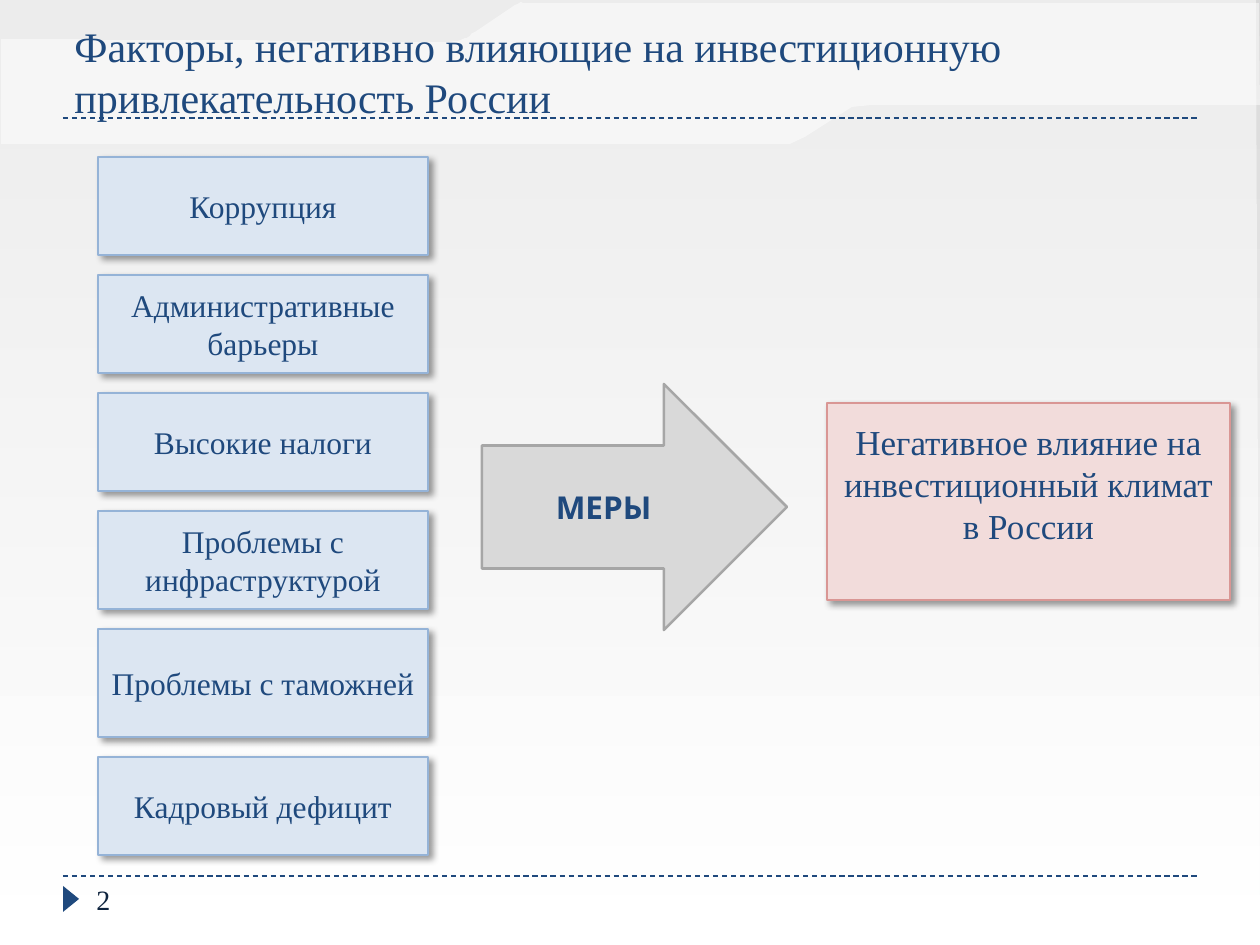
from dataclasses import dataclass

from lxml import etree
from pptx import Presentation
from pptx.dml.color import RGBColor
from pptx.enum.dml import MSO_LINE
from pptx.enum.shapes import MSO_CONNECTOR, MSO_SHAPE
from pptx.enum.text import MSO_ANCHOR, PP_ALIGN
from pptx.oxml.ns import qn
from pptx.util import Emu, Pt

RECT, ARROW = MSO_SHAPE.RECTANGLE, MSO_SHAPE.RIGHT_ARROW
TRIANGLE = MSO_SHAPE.ISOSCELES_TRIANGLE
LEFT, CENTER = PP_ALIGN.LEFT, PP_ALIGN.CENTER
TOP, MIDDLE, BOTTOM = MSO_ANCHOR.TOP, MSO_ANCHOR.MIDDLE, MSO_ANCHOR.BOTTOM

PX = 7257  # EMU per px, 126 px to the inch


@dataclass(frozen=True)
class Theme:
    navy: str = "1F497D"
    number: str = "0F243E"
    white: str = "FFFFFF"
    gray: str = "D9D9D9"
    gray_line: str = "A6A6A6"
    blue: str = "DCE6F2"
    blue_line: str = "95B3D7"
    red: str = "F2DCDB"
    red_line: str = "D99694"
    serif: str = "Times New Roman"
    sans: str = "Cabin"
    title_size: int = 24
    effect_size: int = 20
    body_size: int = 18
    number_size: int = 16


T = Theme()

TITLE = "Факторы, негативно влияющие на инвестиционную привлекательность России"
FACTORS = [  # text, height
    ("Коррупция", 98),
    ("Административные барьеры", 98),
    ("Высокие налоги", 98),
    ("Проблемы с инфраструктурой", 98),
    ("Проблемы с таможней", 108),
    ("Кадровый дефицит", 98),
]
FACTOR_LEFT, FACTOR_TOP, FACTOR_WIDTH, FACTOR_GAP = 98, 157, 330, 20
EFFECT = "Негативное влияние на инвестиционный климат в России"
MEASURES = "МЕРЫ"
PAGE = "2"

RULES_Y = (118, 876)
VEIL = [(-3, 944), (1260, 945), (1256, 0), (-4, 0)]
# Two numbers are a line's end, six are the controls and end of a curve
WAVE = [
    (1259, 3), (538, 3), (507, 3, 528, 0, 515, 5), (478, 30),
    (466, 37, 470, 39, 450, 42), (237, 40, 1, 39, 1, 39), (1, 144),
    (790, 144), (805, 137), (852, 107), (873, 105), (1260, 105),
]


def px(*values):
    return [Emu(v * PX) for v in values]


def rgb(color):
    return RGBColor.from_string(color)


def flatten(outline, steps=12):
    """Turn lines and cubic curves into a list of points."""
    points = [outline[0]]
    for part in outline[1:]:
        if len(part) == 2:
            points.append(part)
            continue
        curve = [points[-1], part[:2], part[2:4], part[4:]]
        for i in range(1, steps + 1):
            t = i / steps
            weights = ((1 - t) ** 3, 3 * t * (1 - t) ** 2, 3 * t * t * (1 - t), t ** 3)
            points.append(tuple(sum(w * c[k] for w, c in zip(weights, curve))
                                for k in (0, 1)))
    return points


def add_glaze(slide, outline):
    """Add a half-transparent white area."""
    points = flatten(outline)
    builder = slide.shapes.build_freeform(*points[0], scale=PX)
    builder.add_line_segments(points[1:], close=True)
    s = builder.convert_to_shape()
    s.shadow.inherit = False
    s.line.fill.background()
    s.fill.solid()
    s.fill.fore_color.rgb = rgb(T.white)
    color = s.fill._xPr.find(".//" + qn("a:srgbClr"))
    etree.SubElement(color, qn("a:alpha"), val="50000")


def add_rule(slide, y):
    s = slide.shapes.add_connector(MSO_CONNECTOR.STRAIGHT, *px(63, y, 1197, y))
    s.line.color.rgb = rgb(T.navy)
    s.line.width = Pt(0.75)
    s.line.dash_style = MSO_LINE.DASH
    etree.SubElement(s._element.spPr, qn("a:effectLst"))


def add_shape(slide, kind, box, fill, line=None, width=0.75, shadow=False):
    s = slide.shapes.add_shape(kind, *px(*box))
    s.shadow.inherit = False
    s.fill.solid()
    s.fill.fore_color.rgb = rgb(fill)
    if line:
        s.line.color.rgb = rgb(line)
        s.line.width = Pt(width)
    else:
        s.line.fill.background()
    if shadow:
        effects = s._element.spPr.find(qn("a:effectLst"))
        outer = etree.SubElement(effects, qn("a:outerShdw"), blurRad="50800",
                                 dist="38100", dir="2700000", algn="tl",
                                 rotWithShape="0")
        color = etree.SubElement(outer, qn("a:srgbClr"), val="000000")
        etree.SubElement(color, qn("a:alpha"), val="40000")
    return s


def write(s, text, size, color=T.navy, font=T.serif, bold=False,
          align=CENTER, anchor=MIDDLE, **margins):
    tf = s.text_frame
    frame = {"word_wrap": True, "vertical_anchor": anchor, **margins}
    for name, value in frame.items():
        setattr(tf, name, value)
    p = tf.paragraphs[0]
    p.alignment = align
    r = p.add_run()
    r.text = text
    for name, value in {"name": font, "size": Pt(size), "bold": bold}.items():
        setattr(r.font, name, value)
    r.font.color.rgb = rgb(color)


def main():
    prs = Presentation()
    prs.slide_width, prs.slide_height = px(1260, 945)
    slide = prs.slides.add_slide(prs.slide_layouts[6])

    bg = slide.background.fill
    bg.gradient()
    bg.gradient_angle = 270
    for stop, color, position in zip(bg.gradient_stops, (T.gray, T.white), (0, 1)):
        stop.color.rgb = rgb(color)
        stop.position = position

    for outline in (VEIL, WAVE):
        add_glaze(slide, outline)
    for y in RULES_Y:
        add_rule(slide, y)
    marker = add_shape(slide, TRIANGLE, (58, 891, 26, 16), T.navy)
    marker.rotation = 90

    title = slide.shapes.add_textbox(*px(62, 0, 1169, 128))
    write(title, TITLE, T.title_size, align=LEFT, anchor=BOTTOM)
    number = slide.shapes.add_textbox(*px(84, 876, 273, 50))
    write(number, PAGE, T.number_size, T.number, align=LEFT, anchor=TOP)

    inset = Emu(13 * PX)
    y = FACTOR_TOP
    for text, height in FACTORS:
        s = add_shape(slide, RECT, (FACTOR_LEFT, y, FACTOR_WIDTH, height),
                      T.blue, T.blue_line, shadow=True)
        write(s, text, T.body_size, margin_left=inset, margin_right=inset,
              margin_top=inset, margin_bottom=inset)
        y += height + FACTOR_GAP

    effect = add_shape(slide, RECT, (827, 403, 403, 197), T.red, T.red_line, 1.5, True)
    write(effect, EFFECT, T.effect_size, margin_bottom=Emu(43 * PX))
    arrow = add_shape(slide, ARROW, (482, 384, 305, 246), T.gray, T.gray_line, 1.5)
    write(arrow, MEASURES, T.body_size, font=T.sans, bold=True)

    prs.save("out.pptx")


if __name__ == "__main__":
    main()
